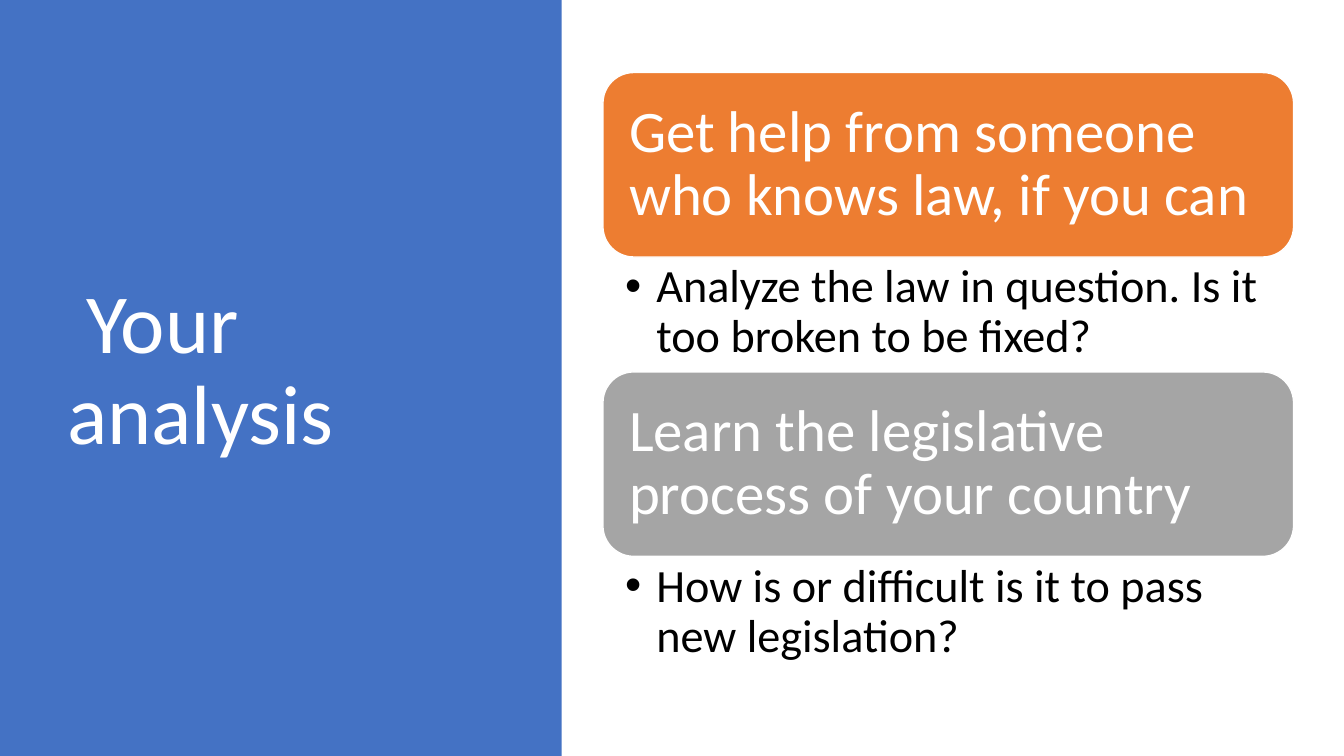
from dataclasses import dataclass

from lxml.etree import SubElement
from pptx import Presentation
from pptx.dml.color import RGBColor
from pptx.enum.shapes import MSO_SHAPE as SHAPE
from pptx.enum.text import MSO_ANCHOR as ANCHOR, PP_ALIGN as ALIGN
from pptx.oxml.ns import qn
from pptx.util import Inches, Pt


@dataclass(frozen=True)
class Theme:
    font: str = "Calibri"
    blue: str = "4472C4"
    orange: str = "ED7D31"
    gray: str = "A5A5A5"
    white: str = "FFFFFF"
    black: str = "000000"
    title: int = 60
    heading: int = 42
    body: int = 33


class Deck:
    def __init__(self, s, theme):
        self.s, self.theme = s, theme

    def shape(self, kind, box, fill, line=None):
        sp = self.s.shapes.add_shape(kind, *map(Inches, box))
        sp.shadow.inherit = False
        sp.fill.solid()
        sp.fill.fore_color.rgb = RGBColor.from_string(fill)
        if line:
            sp.line.color.rgb = RGBColor.from_string(line)
            sp.line.width = Pt(1)
        else:
            sp.line.fill.background()
        return sp

    def add_text(self, sp, text, size, color, insets, anchor=ANCHOR.MIDDLE):
        tf = sp.text_frame
        tf.word_wrap = True
        tf.vertical_anchor = anchor
        tf.margin_left, tf.margin_top, tf.margin_right, tf.margin_bottom = map(Inches, insets)
        p = tf.paragraphs[0]
        p.alignment = ALIGN.LEFT
        p.line_spacing = 0.9
        r = p.add_run()
        r.text = text
        r.font.name = self.theme.font
        r.font.size = Pt(size)
        r.font.color.rgb = RGBColor.from_string(color)
        return p

    def title(self, box, text):
        sp = self.s.shapes.add_textbox(*map(Inches, box))
        self.add_text(sp, text, self.theme.title, self.theme.white, (0.1, 0.05, 0.1, 0.05))

    def heading(self, box, text, fill):
        sp = self.shape(SHAPE.ROUNDED_RECTANGLE, box, fill, self.theme.white)
        self.add_text(sp, text, self.theme.heading, self.theme.white, (0.17,) * 4)

    def bullet(self, box, text):
        sp = self.s.shapes.add_textbox(*map(Inches, box))
        p = self.add_text(sp, text, self.theme.body, self.theme.black,
                          (0.22, 0.06, 0.33, 0.06), ANCHOR.TOP)
        pPr = p._p.get_or_add_pPr()
        pPr.set("marL", str(Inches(0.31)))
        pPr.set("indent", str(-Inches(0.31)))
        SubElement(pPr, qn("a:buFont"), typeface="Arial")
        SubElement(pPr, qn("a:buChar"), char="•")


def main():
    prs = Presentation()
    prs.slide_width, prs.slide_height = Inches(13.33), Inches(7.5)
    theme = Theme()
    deck = Deck(prs.slides.add_slide(prs.slide_layouts[6]), theme)

    deck.shape(SHAPE.RECTANGLE, (0, 0, 5.57, 7.5), theme.blue)
    deck.title((0.57, 0.68, 4.16, 6.02), " Your analysis")

    steps = [
        ("Get help from someone who knows law, if you can",
         "Analyze the law in question. Is it too broken to be fixed?", theme.orange),
        ("Learn the legislative process of your country",
         "How is or difficult is it to pass new legislation?", theme.gray),
    ]
    left, top, width, heading_h, bullet_h = 5.98, 0.72, 6.85, 1.83, 1.14
    for i, (heading, detail, fill) in enumerate(steps):
        y = top + i * (heading_h + bullet_h)
        deck.heading((left, y, width, heading_h), heading, fill)
        deck.bullet((left, y + heading_h, width, bullet_h), detail)

    prs.save("out.pptx")


if __name__ == "__main__":
    main()
